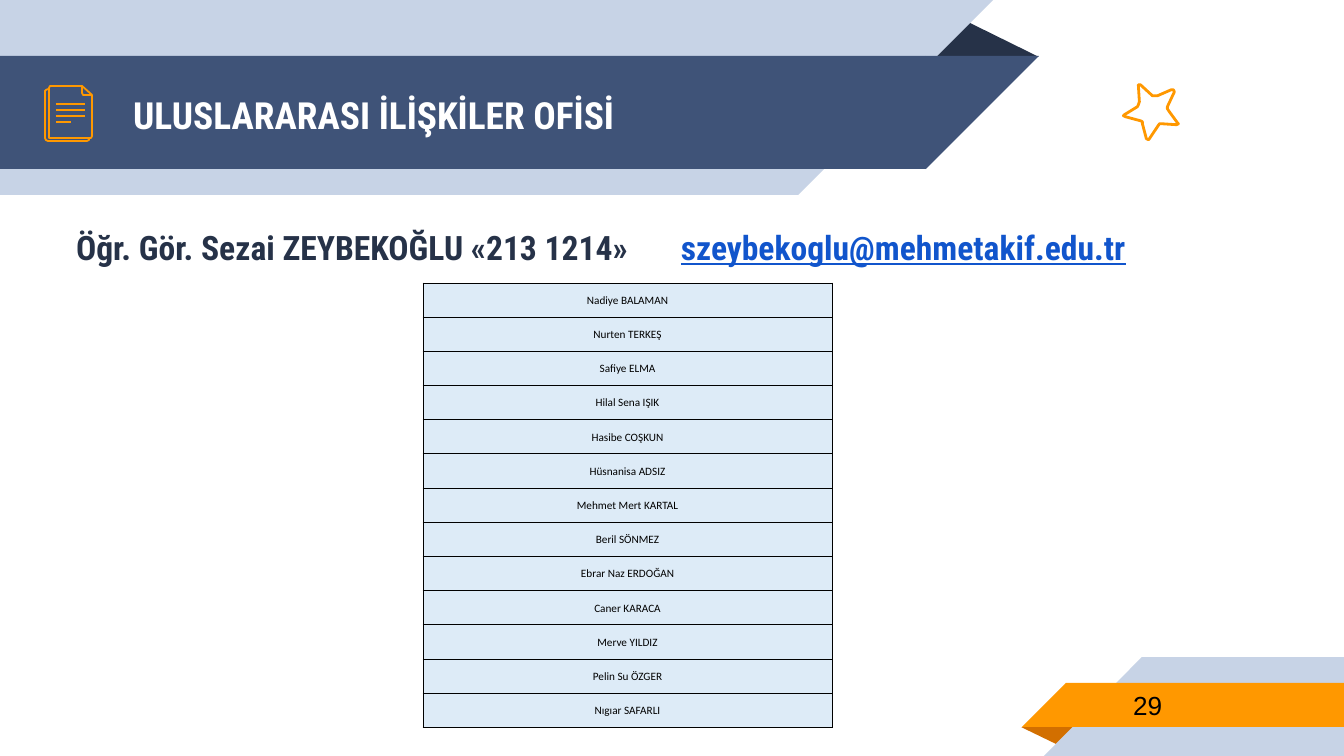
"""Build the slide of the international relations office with its staff table."""
from dataclasses import dataclass
from math import cos, radians, sin

from lxml.etree import SubElement
from pptx import Presentation
from pptx.dml.color import RGBColor
from pptx.enum.shapes import MSO_CONNECTOR, MSO_SHAPE
from pptx.enum.text import MSO_ANCHOR, MSO_AUTO_SIZE, PP_ALIGN
from pptx.oxml import parse_xml
from pptx.oxml.ns import nsdecls, qn
from pptx.util import Emu, Pt

SCALE = 914400 / 134.4
NAVY, BLUE, PALE = "263248", "3F5378", "C7D3E6"
ORANGE, RUST = "FF9800", "D26F00"
WHITE, BLACK, LINK, CELL = "FFFFFF", "000000", "1155CC", "DDEBF7"
HEAD_FONT = "Roboto Condensed"
INSET = 13


@dataclass
class Box:
    x: int
    y: int
    w: int
    h: int


@dataclass
class Block:
    kind: MSO_SHAPE
    box: Box
    color: str
    rotation: int = 0
    flip: bool = False


@dataclass
class Outline:
    points: list
    closed: bool = False
    width: float = 0.96
    rotation: int = 0


TRIANGLE, RECT, CORNER = MSO_SHAPE.ISOSCELES_TRIANGLE, MSO_SHAPE.RECTANGLE, MSO_SHAPE.RIGHT_TRIANGLE

BLOCKS = [
    Block(TRIANGLE, Box(925, 19, 114, 38), NAVY),
    Block(RECT, Box(0, 0, 798, 195), PALE),
    Block(CORNER, Box(798, 0, 195, 195), PALE, 180, True),
    Block(RECT, Box(0, 56, 926, 113), BLUE),
    Block(CORNER, Box(926, 56, 113, 113), BLUE, 180, True),
    Block(TRIANGLE, Box(1021, 727, 58, 19), RUST, 180),
    Block(RECT, Box(1142, 657, 202, 99), PALE),
    Block(CORNER, Box(1044, 657, 98, 99), PALE, 0, True),
    Block(RECT, Box(1066, 683, 278, 44), ORANGE),
    Block(CORNER, Box(1022, 683, 44, 44), ORANGE, 0, True),
]

OUTLINES = [
    Outline([(89, 138), (89, 140), (87, 141), (48, 141), (46, 140), (45, 138),
             (45, 91), (46, 90), (48, 89)]),
    Outline([(92, 95), (92, 136), (91, 138), (89, 138), (51, 138), (49, 138),
             (49, 136), (49, 88), (50, 86), (51, 86), (82, 86)]),
    Outline([(82, 86), (92, 95), (85, 95), (83, 95), (82, 93)], closed=True),
    Outline([(1175, 91), (1177, 91), (1178, 93), (1171, 108), (1171, 110), (1173, 113),
             (1181, 124), (1182, 125), (1180, 126), (1165, 125), (1163, 125), (1161, 128),
             (1153, 140), (1152, 141), (1150, 140), (1146, 125), (1146, 123), (1144, 122),
             (1129, 118), (1127, 117), (1128, 116), (1141, 108), (1142, 106), (1143, 103),
             (1142, 87), (1142, 86), (1144, 86), (1156, 97), (1158, 97), (1161, 97)],
            closed=True, width=1.5, rotation=45),
]

NAMES = ["Nadiye BALAMAN", "Nurten TERKEŞ", "Safiye ELMA", "Hilal Sena IŞIK",
         "Hasibe COŞKUN", "Hüsnanisa ADSIZ", "Mehmet Mert KARTAL", "Beril SÖNMEZ",
         "Ebrar Naz ERDOĞAN", "Caner KARACA", "Merve YILDIZ", "Pelin Su ÖZGER",
         "Nıgıar SAFARLI"]


def px(n: float) -> Emu:
    """Turn pixels into EMU."""
    return Emu(round(n * SCALE))


def rgb(color: str) -> RGBColor:
    """Turn a hex string into a colour."""
    return RGBColor.from_string(color)


def place(sp, box: Box) -> None:
    """Move and size a shape."""
    sp.left, sp.top, sp.width, sp.height = px(box.x), px(box.y), px(box.w), px(box.h)


def style(r, font: str, size: float, color: str, bold: bool = False) -> None:
    """Format one run."""
    r.font.name, r.font.size, r.font.bold = font, Pt(size), bold
    r.font.color.rgb = rgb(color)


def frame(tf, anchor: MSO_ANCHOR, top: int = INSET) -> None:
    """Set the wrapping, anchor and insets of a text frame."""
    tf.word_wrap, tf.auto_size, tf.vertical_anchor = True, MSO_AUTO_SIZE.NONE, anchor
    tf.margin_left = tf.margin_right = tf.margin_bottom = px(INSET)
    tf.margin_top = px(top)


def draw_block(s, block: Block) -> None:
    """Draw one flat part of a banner."""
    b = block.box
    sp = s.shapes.add_shape(block.kind, px(b.x), px(b.y), px(b.w), px(b.h))
    sp.shadow.inherit = False
    sp.fill.solid()
    sp.fill.fore_color.rgb = rgb(block.color)
    sp.line.fill.background()
    sp.rotation = block.rotation
    if block.kind == TRIANGLE:
        sp.adjustments[0] = 0.324
    if block.flip:
        sp.element.spPr.find(qn("a:xfrm")).set("flipH", "1")


def turn(points: list, degrees: int) -> list:
    """Turn points about the middle of their bounds."""
    cx, cy = ((min(v) + max(v)) / 2 for v in zip(*points))
    c, n = cos(radians(degrees)), sin(radians(degrees))
    return [(cx + (x - cx) * c - (y - cy) * n, cy + (x - cx) * n + (y - cy) * c)
            for x, y in points]


def draw_outline(s, outline: Outline) -> None:
    """Draw one unfilled icon outline."""
    first, *rest = [(px(x), px(y)) for x, y in turn(outline.points, -outline.rotation)]
    fb = s.shapes.build_freeform(*first)
    fb.add_line_segments(rest, close=outline.closed)
    sp = fb.convert_to_shape()
    sp.shadow.inherit = False
    sp.fill.background()
    sp.line.color.rgb, sp.line.width = rgb(ORANGE), Pt(outline.width)
    sp.rotation = outline.rotation


def draw_rule(s, x1: int, x2: int, y: int) -> None:
    """Draw one text rule of the page icon."""
    cn = s.shapes.add_connector(MSO_CONNECTOR.STRAIGHT, px(x1), px(y), px(x2), px(y))
    cn.line.color.rgb, cn.line.width = rgb(ORANGE), Pt(0.96)
    SubElement(cn.element.spPr, qn("a:effectLst"))


def fill_title(sp) -> None:
    """Place and format the title."""
    place(sp, Box(120, 58, 773, 113))
    tf = sp.text_frame
    tf.text = "ULUSLARARASI İLİŞKİLER OFİSİ"
    frame(tf, MSO_ANCHOR.MIDDLE)
    p = tf.paragraphs[0]
    p.alignment = PP_ALIGN.LEFT
    style(p.runs[0], HEAD_FONT, 20, WHITE, True)


def fill_contact(sp) -> None:
    """Place and format the contact line, with the address at a tab stop."""
    place(sp, Box(63, 155, 1232, 496))
    tf = sp.text_frame
    tf.text = "Öğr. Gör. Sezai ZEYBEKOĞLU «213 1214»\t"
    frame(tf, MSO_ANCHOR.TOP, 72)
    p = tf.paragraphs[0]
    p.space_before, p.space_after = Pt(0), Pt(10)
    r = p.add_run()
    r.text = "szeybekoglu@mehmetakif.edu.tr"
    style(p.runs[0], HEAD_FONT, 18, NAVY, True)
    style(r, HEAD_FONT, 18, LINK, True)
    r.font.underline = True
    pPr = p._p.get_or_add_pPr()
    pPr.set("marL", "0")
    pPr.set("indent", "0")
    SubElement(pPr, qn("a:buNone"))
    tabs = SubElement(pPr, qn("a:tabLst"))
    SubElement(tabs, qn("a:tab"), pos=str(px(630)), algn="l")


def draw_table(s, box: Box, names: list[str]) -> None:
    """Draw the one-column staff table."""
    table = s.shapes.add_table(len(names), 1, px(box.x), px(box.y), px(box.w), px(box.h)).table
    table.first_row = table.horz_banding = False
    for row, name in zip(table.rows, names):
        row.height = px(box.h / len(names))
        cell = row.cells[0]
        cell.text_frame.text = name
        cell.vertical_anchor = MSO_ANCHOR.MIDDLE
        cell.margin_left = cell.margin_right = cell.margin_top = px(1)
        cell.margin_bottom = 0
        p = cell.text_frame.paragraphs[0]
        p.alignment = PP_ALIGN.CENTER
        style(p.runs[0], "Calibri", 6, BLACK)
        cell.fill.solid()
        cell.fill.fore_color.rgb = rgb(CELL)
        for i, side in enumerate("LRTB"):
            cell._tc.tcPr.insert(i, parse_xml(
                f'<a:ln{side} {nsdecls("a")} w="{Pt(0.5)}"><a:solidFill>'
                f'<a:srgbClr val="{BLACK}"/></a:solidFill></a:ln{side}>'))


def draw_number(s, box: Box, text: str) -> None:
    """Draw the page number."""
    tf = s.shapes.add_textbox(px(box.x), px(box.y), px(box.w), px(box.h)).text_frame
    tf.text = text
    frame(tf, MSO_ANCHOR.MIDDLE)
    style(tf.paragraphs[0].runs[0], "Arial", 14, BLACK)


def main() -> None:
    """Build and save the slide."""
    prs = Presentation()
    prs.slide_width, prs.slide_height = px(1344), px(756)
    s = prs.slides.add_slide(prs.slide_layouts[1])
    title, body = s.placeholders
    for block in BLOCKS:
        draw_block(s, block)
    for sp in (title, body):
        s.shapes.element.append(sp.element)
    fill_title(title)
    fill_contact(body)
    draw_number(s, Box(1120, 682, 219, 47), "29")
    for outline in OUTLINES:
        draw_outline(s, outline)
    for i, right in enumerate((85, 85, 85, 71)):
        draw_rule(s, 56, right, 104 + 6 * i)
    draw_table(s, Box(423, 283, 409, 445), NAMES)
    prs.save("out.pptx")


if __name__ == "__main__":
    main()
